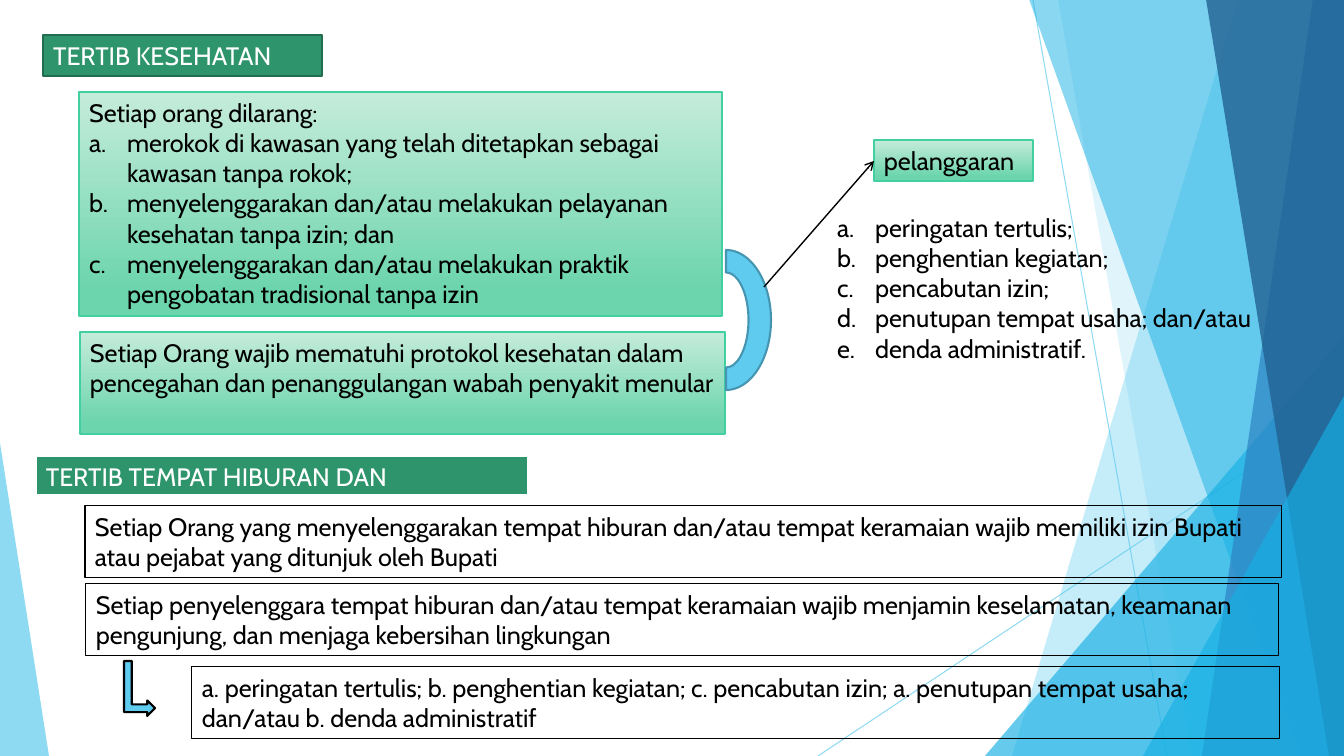
from dataclasses import dataclass
from typing import NamedTuple, Optional

from lxml.etree import SubElement
from pptx import Presentation
from pptx.dml.color import RGBColor
from pptx.enum.shapes import MSO_CONNECTOR, MSO_SHAPE
from pptx.enum.text import MSO_ANCHOR, MSO_AUTO_SIZE, PP_ALIGN
from pptx.oxml.ns import qn
from pptx.util import Emu, Pt

EMU_PER_PX = 914400 / 100.8
WIDTH, HEIGHT = 1344, 756
FONT, TEXT_SIZE = "Cabin", 18
INDENT = 38
SKY, CYAN, BLUE, NAVY = "5FCBEF", "17B0E4", "2E83C3", "226292"
GREEN, BLACK, WHITE = "2E946B", "000000", "FFFFFF"
MINT = ("C5ECDB", "6DD5AE")
MINT_EDGE = "42D0A2"


class Box(NamedTuple):
    left: int
    top: int
    width: int
    height: int


class Band(NamedTuple):
    top_left: int
    bottom_left: int
    color: str
    opacity: int


class Wedge(NamedTuple):
    box: Box
    apex: int
    color: str
    opacity: int


class Ray(NamedTuple):
    start: tuple[int, int]
    end: tuple[int, int]


@dataclass
class Panel:
    box: Box
    lines: list[str]
    fill: Optional[str | tuple[str, str]] = None
    edge: Optional[str] = None
    edge_width: float = 1
    text_color: str = BLACK
    placeholder: Optional[int] = None
    wrap: bool = True
    numbered_from: Optional[int] = None


RAYS = [Ray((1033, 0), (1167, HEIGHT)), Ray((WIDTH, 406), (818, HEIGHT))]
BACKDROP = [
    Band(1238, 1012, SKY, 36),
    Band(1058, 1192, SKY, 20),
    Wedge(Box(985, 336, 359, 420), 1, CYAN, 66),
    Band(1029, 1301, CYAN, 50),
    Band(1313, 1202, BLUE, 70),
    Band(1206, 1329, NAVY, 80),
    Wedge(Box(1143, 396, 201, 360), 1, CYAN, 66),
    Wedge(Box(0, 443, 49, 313), 0, SKY, 70),
]
PANELS = [
    Panel(Box(43, 35, 279, 41), ["TERTIB KESEHATAN"], GREEN, "226D4F", 1.5, WHITE, placeholder=0),
    Panel(Box(79, 92, 643, 224), [
        "Setiap orang dilarang:",
        "merokok di kawasan yang telah ditetapkan sebagai kawasan tanpa rokok;",
        "menyelenggarakan dan/atau melakukan pelayanan kesehatan tanpa izin; dan",
        "menyelenggarakan dan/atau melakukan praktik pengobatan tradisional tanpa izin",
    ], MINT, MINT_EDGE, placeholder=1, numbered_from=1),
    Panel(Box(80, 332, 645, 102), [
        "Setiap Orang wajib mematuhi protokol kesehatan dalam pencegahan dan "
        "penanggulangan wabah penyakit menular"], MINT, MINT_EDGE),
    Panel(Box(827, 207, 481, 163), [
        "peringatan tertulis;",
        "penghentian kegiatan;",
        "pencabutan izin;",
        "penutupan tempat usaha; dan/atau",
        "denda administratif.",
    ], placeholder=2, numbered_from=0),
    Panel(Box(874, 140, 159, 41), ["pelanggaran"], MINT, MINT_EDGE, wrap=False),
    Panel(Box(36, 456, 492, 40), ["TERTIB TEMPAT HIBURAN DAN"], GREEN, WHITE, 2, WHITE),
    Panel(Box(85, 506, 1197, 72), [
        "Setiap Orang yang menyelenggarakan tempat hiburan dan/atau tempat keramaian "
        "wajib memiliki izin Bupati atau pejabat yang ditunjuk oleh Bupati"], None, BLACK, 0.75),
    Panel(Box(86, 584, 1193, 72), [
        "Setiap penyelenggara tempat hiburan dan/atau tempat keramaian wajib menjamin "
        "keselamatan, keamanan pengunjung, dan menjaga kebersihan lingkungan"], None, BLACK, 0.75),
    Panel(Box(192, 667, 1088, 72), [
        "a. peringatan tertulis; b. penghentian kegiatan; c. pencabutan izin; "
        "a. penutupan tempat usaha; dan/atau b. denda administratif"], None, BLACK, 0.75),
]


def px(value: float) -> Emu:
    return Emu(round(value * EMU_PER_PX))


def rgb(color: str) -> RGBColor:
    return RGBColor.from_string(color)


def set_opacity(shape, percent: int) -> None:
    for color in list(shape.element.iter(qn("a:srgbClr"))):
        SubElement(color, qn("a:alpha"), val=str(percent * 1000))


def style_shape(shape, fill=None, edge: Optional[str] = None, edge_width: float = 1) -> None:
    shape.shadow.inherit = False
    if fill is None:
        shape.fill.background()
    elif isinstance(fill, tuple):
        shape.fill.gradient()
        shape.fill.gradient_angle = 270
        for stop, color, position in zip(shape.fill.gradient_stops, fill, (0, 0.88)):
            stop.color.rgb = rgb(color)
            stop.position = position
    else:
        shape.fill.solid()
        shape.fill.fore_color.rgb = rgb(fill)
    if edge is None:
        shape.line.fill.background()
    else:
        shape.line.color.rgb = rgb(edge)
        shape.line.width = Pt(edge_width)


def add_preset(slide, preset: MSO_SHAPE, box: Box):
    return slide.shapes.add_shape(preset, *map(px, box))


def add_line(slide, ray: Ray, color: str, width: float):
    line = slide.shapes.add_connector(MSO_CONNECTOR.STRAIGHT, *map(px, ray.start + ray.end))
    line.line.color.rgb = rgb(color)
    line.line.width = Pt(width)
    SubElement(line.element.spPr, qn("a:effectLst"))
    return line


def add_backdrop(slide, part: Band | Wedge) -> None:
    if isinstance(part, Band):
        builder = slide.shapes.build_freeform(part.top_left, -1, scale=EMU_PER_PX)
        builder.add_line_segments([(WIDTH, -1), (WIDTH, HEIGHT), (part.bottom_left, HEIGHT)])
        shape = builder.convert_to_shape()
    else:
        shape = add_preset(slide, MSO_SHAPE.ISOSCELES_TRIANGLE, part.box)
        shape.adjustments[0] = part.apex
    style_shape(shape, part.color)
    set_opacity(shape, part.opacity)


def set_bullet(paragraph, numbered: bool) -> None:
    properties = paragraph._p.get_or_add_pPr()
    indent = px(INDENT) if numbered else 0
    properties.set("marL", str(indent))
    properties.set("indent", str(-indent))
    if numbered:
        SubElement(properties, qn("a:buFont"), typeface=FONT)
        SubElement(properties, qn("a:buAutoNum"), type="alphaLcPeriod")
    else:
        SubElement(properties, qn("a:buNone"))


def add_panel(slide, panel: Panel) -> None:
    if panel.placeholder is None:
        shape = add_preset(slide, MSO_SHAPE.RECTANGLE, panel.box)
    else:
        shape = slide.placeholders[panel.placeholder]
        shape.element.getparent().append(shape.element)  # bring in front of the backdrop
        shape.left, shape.top, shape.width, shape.height = map(px, panel.box)
    style_shape(shape, panel.fill, panel.edge, panel.edge_width)

    frame = shape.text_frame
    frame.text = "\n".join(panel.lines)
    frame.word_wrap = panel.wrap
    frame.auto_size = MSO_AUTO_SIZE.NONE
    frame.vertical_anchor = MSO_ANCHOR.TOP
    for index, paragraph in enumerate(frame.paragraphs):
        paragraph.alignment = PP_ALIGN.LEFT
        paragraph.space_before = Pt(0)
        if panel.numbered_from is not None:
            set_bullet(paragraph, index >= panel.numbered_from)
        for run in paragraph.runs:
            run.font.name = FONT
            run.font.size = Pt(TEXT_SIZE)
            run.font.color.rgb = rgb(panel.text_color)


def main() -> None:
    presentation = Presentation()
    presentation.slide_width, presentation.slide_height = px(WIDTH), px(HEIGHT)
    slide = presentation.slides.add_slide(presentation.slide_layouts[3])

    # Backdrop
    for ray in RAYS:
        set_opacity(add_line(slide, ray, SKY, 0.75), 70)
    for part in BACKDROP:
        add_backdrop(slide, part)

    # Headings, rules and sanctions
    for panel in PANELS:
        add_panel(slide, panel)

    # Bracket and arrows from rules to sanctions
    bracket = add_preset(slide, MSO_SHAPE.BLOCK_ARC, Box(656, 275, 140, 90))
    style_shape(bracket, SKY, "4696B1", 1.5)
    bent_arrow = add_preset(slide, MSO_SHAPE.BENT_UP_ARROW, Box(112, 673, 55, 31))
    style_shape(bent_arrow, SKY, BLACK, 1.5)
    bracket.rotation = bent_arrow.rotation = 90
    pointer = add_line(slide, Ray((764, 287), (874, 161)), BLACK, 1)
    SubElement(pointer.line._get_or_add_ln(), qn("a:tailEnd"), type="arrow")

    presentation.save("out.pptx")


if __name__ == "__main__":
    main()
